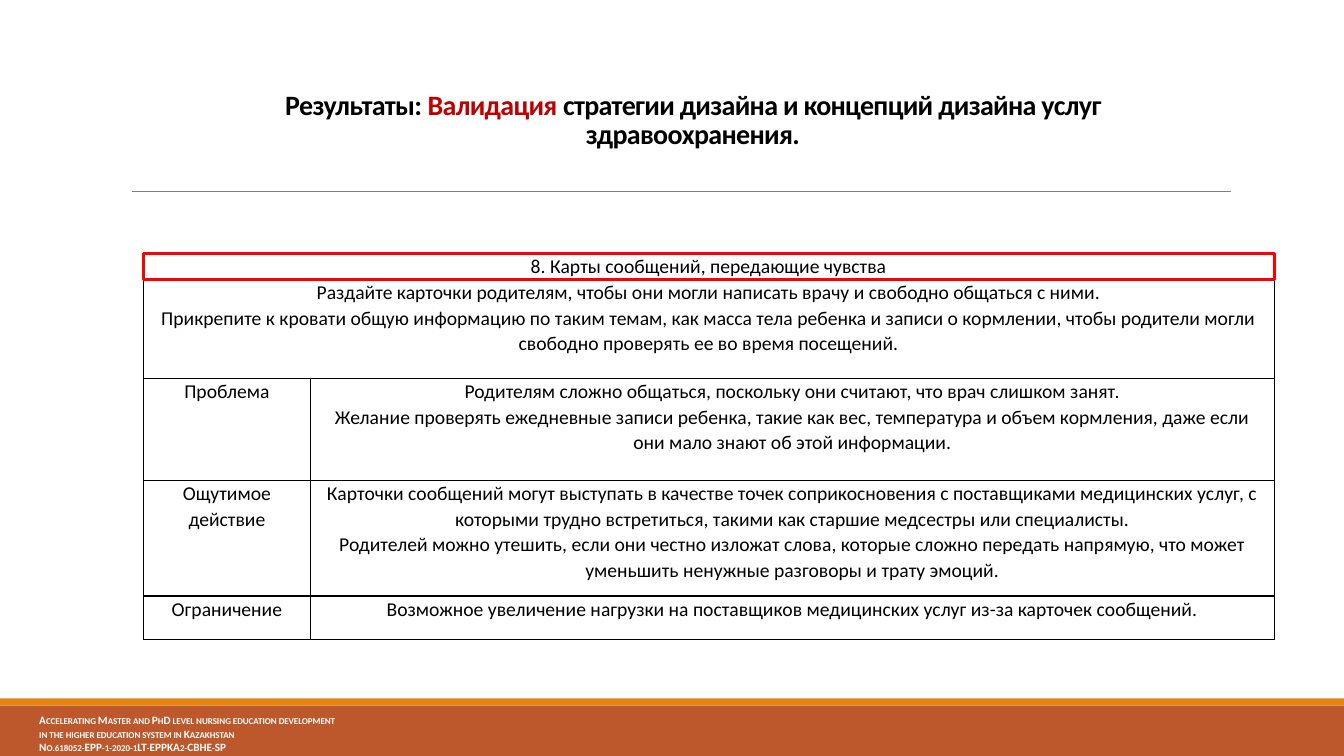
from dataclasses import dataclass

from lxml.etree import SubElement
from pptx import Presentation
from pptx.dml.color import RGBColor
from pptx.enum.shapes import MSO_CONNECTOR, MSO_SHAPE
from pptx.enum.text import MSO_ANCHOR, PP_ALIGN
from pptx.oxml.ns import qn
from pptx.slide import Slide
from pptx.table import _Cell
from pptx.text.text import Font, TextFrame
from pptx.util import Cm, Pt


@dataclass(frozen=True)
class Theme:
    face: str = "Calibri"
    ink: str = "000000"
    paper: str = "FFFFFF"
    accent: str = "C00000"
    frame: str = "FF0000"
    rule: str = "808080"
    band: str = "BD582C"
    strip: str = "E48312"
    title: float = 20
    body: float = 14
    small: float = 8


@dataclass(frozen=True)
class Box:
    left: float
    top: float
    width: float
    height: float

    def cm(self) -> tuple[Cm, Cm, Cm, Cm]:
        return Cm(self.left), Cm(self.top), Cm(self.width), Cm(self.height)


@dataclass(frozen=True)
class Row:
    height: float
    text: tuple[str, ...]
    label: str = ""


THEME = Theme()
WIDTH, HEIGHT = 33.87, 19.05
BANDS = (
    (Box(0, 17.78, WIDTH, 1.27), THEME.band),
    (Box(0, 17.6, WIDTH, 0.18), THEME.strip),
)
FOOTER = (
    "Accelerating Master and PhD level nursing education development",
    "in the higher education system in Kazakhstan",
    "No.618052-EPP-1-2020-1LT-EPPKA2-CBHE-SP",
)
TITLE = (
    ("Результаты: ", THEME.ink),
    ("Валидация", THEME.accent),
    (" стратегии дизайна и концепций дизайна услуг здравоохранения.", THEME.ink),
)
COLS = (4.22, 24.28)
ROWS = (
    Row(0.66, ("8. Карты сообщений, передающие чувства",)),
    Row(2.49, (
        "Раздайте карточки родителям, чтобы они могли написать врачу и свободно общаться с ними.",
        "Прикрепите к кровати общую информацию по таким темам, как масса тела ребенка и записи "
        "о кормлении, чтобы родители могли свободно проверять ее во время посещений.",
    )),
    Row(2.57, (
        "Родителям сложно общаться, поскольку они считают, что врач слишком занят.",
        "Желание проверять ежедневные записи ребенка, такие как вес, температура и объем "
        "кормления, даже если они мало знают об этой информации.",
    ), "Проблема"),
    Row(2.92, (
        "Карточки сообщений могут выступать в качестве точек соприкосновения с поставщиками "
        "медицинских услуг, с которыми трудно встретиться, такими как старшие медсестры или "
        "специалисты.",
        "Родителей можно утешить, если они честно изложат слова, которые сложно передать "
        "напрямую, что может уменьшить ненужные разговоры и трату эмоций.",
    ), "Ощутимое действие"),
    Row(1.09, (
        "Возможное увеличение нагрузки на поставщиков медицинских услуг из-за карточек сообщений.",
    ), "Ограничение"),
)
GRID = Box(3.61, 6.38, sum(COLS), sum(row.height for row in ROWS))


def style(font: Font, size: float, tint: str, bold: bool = False) -> None:
    """Set face, size, colour and weight."""
    font.name, font.size, font.bold = THEME.face, Pt(size), bold
    font.color.rgb = RGBColor.from_string(tint)


def draw_band(slide: Slide, box: Box, tint: str) -> None:
    """Draw a filled bar with no outline."""
    bar = slide.shapes.add_shape(MSO_SHAPE.RECTANGLE, *box.cm())
    bar.shadow.inherit = False
    bar.fill.solid()
    bar.fill.fore_color.rgb = RGBColor.from_string(tint)
    bar.line.fill.background()


def draw_frame(slide: Slide, box: Box) -> None:
    """Draw the red outline round the heading row."""
    frame = slide.shapes.add_shape(MSO_SHAPE.RECTANGLE, *box.cm())
    frame.shadow.inherit = False
    frame.fill.background()
    frame.line.color.rgb = RGBColor.from_string(THEME.frame)
    frame.line.width = Pt(2.25)


def draw_rule(slide: Slide, left: float, right: float, top: float) -> None:
    """Draw the thin line under the title."""
    rule = slide.shapes.add_connector(
        MSO_CONNECTOR.STRAIGHT, Cm(left), Cm(top), Cm(right), Cm(top))
    rule.line.color.rgb = RGBColor.from_string(THEME.rule)
    rule.line.width = Pt(0.5)
    SubElement(rule._element.spPr, qn("a:effectLst"))


def add_text(slide: Slide, box: Box) -> TextFrame:
    """Add a wrapping text box and return its frame."""
    frame = slide.shapes.add_textbox(*box.cm()).text_frame
    frame.word_wrap = True
    return frame


def draw_title(slide: Slide) -> None:
    """Write the title with its accented word."""
    frame = add_text(slide, Box(4.95, 1.09, 25.02, 2.82))
    frame.vertical_anchor = MSO_ANCHOR.BOTTOM
    para = frame.paragraphs[0]
    para.alignment, para.line_spacing = PP_ALIGN.CENTER, 0.85
    for text, tint in TITLE:
        run = para.add_run()
        run.text = text
        style(run.font, THEME.title, tint, True)
        run.font._element.set("spc", "-50")


def draw_footer(slide: Slide) -> None:
    """Write the project name in small capitals."""
    frame = add_text(slide, Box(0.74, 17.86, 11.66, 1.19))
    frame.text = "\n".join(FOOTER)
    for para in frame.paragraphs:
        style(para.font, THEME.small, THEME.paper, True)
        para.font._element.set("cap", "small")


def edge(cell: _Cell) -> None:
    """Give a cell thin borders and a plain fill."""
    props = cell._tc.get_or_add_tcPr()
    for side in ("lnL", "lnR", "lnT", "lnB"):
        line = SubElement(props, qn(f"a:{side}"), w=str(Pt(1)))
        fill = SubElement(line, qn("a:solidFill"))
        SubElement(fill, qn("a:srgbClr"), val=THEME.ink)
    cell.fill.solid()
    cell.fill.fore_color.rgb = RGBColor.from_string(THEME.paper)


def fill_cell(cell: _Cell, text: str) -> None:
    """Write centred text in a cell."""
    cell.margin_left = cell.margin_right = Cm(0.19)
    cell.margin_top = cell.margin_bottom = Cm(0)
    cell.text = text
    for para in cell.text_frame.paragraphs:
        para.alignment, para.line_spacing = PP_ALIGN.CENTER, 1.07
        style(para.font, THEME.body, THEME.ink)


def draw_table(slide: Slide) -> None:
    """Build the table; rows with no label span both columns."""
    table = slide.shapes.add_table(len(ROWS), len(COLS), *GRID.cm()).table
    table.first_row = table.horz_banding = False
    for col, width in zip(table.columns, COLS):
        col.width = Cm(width)
    for line, row in zip(table.rows, ROWS):
        line.height = Cm(row.height)
        first, last = line.cells
        for cell, text in ((first, row.label), (last, "\n".join(row.text))):
            edge(cell)
            fill_cell(cell, text)
        if not row.label:
            fill_cell(last, "")
            fill_cell(first, "\n".join(row.text))
            first.merge(last)


def main() -> None:
    """Build and save the slide."""
    deck = Presentation()
    deck.slide_width, deck.slide_height = Cm(WIDTH), Cm(HEIGHT)
    slide = deck.slides.add_slide(deck.slide_layouts[6])
    for box, tint in BANDS:
        draw_band(slide, box, tint)
    draw_rule(slide, 3.33, 31.01, 4.83)
    draw_footer(slide)
    draw_title(slide)
    draw_table(slide)
    draw_frame(slide, Box(GRID.left, GRID.top, GRID.width, ROWS[0].height))
    deck.save("out.pptx")


if __name__ == "__main__":
    main()
